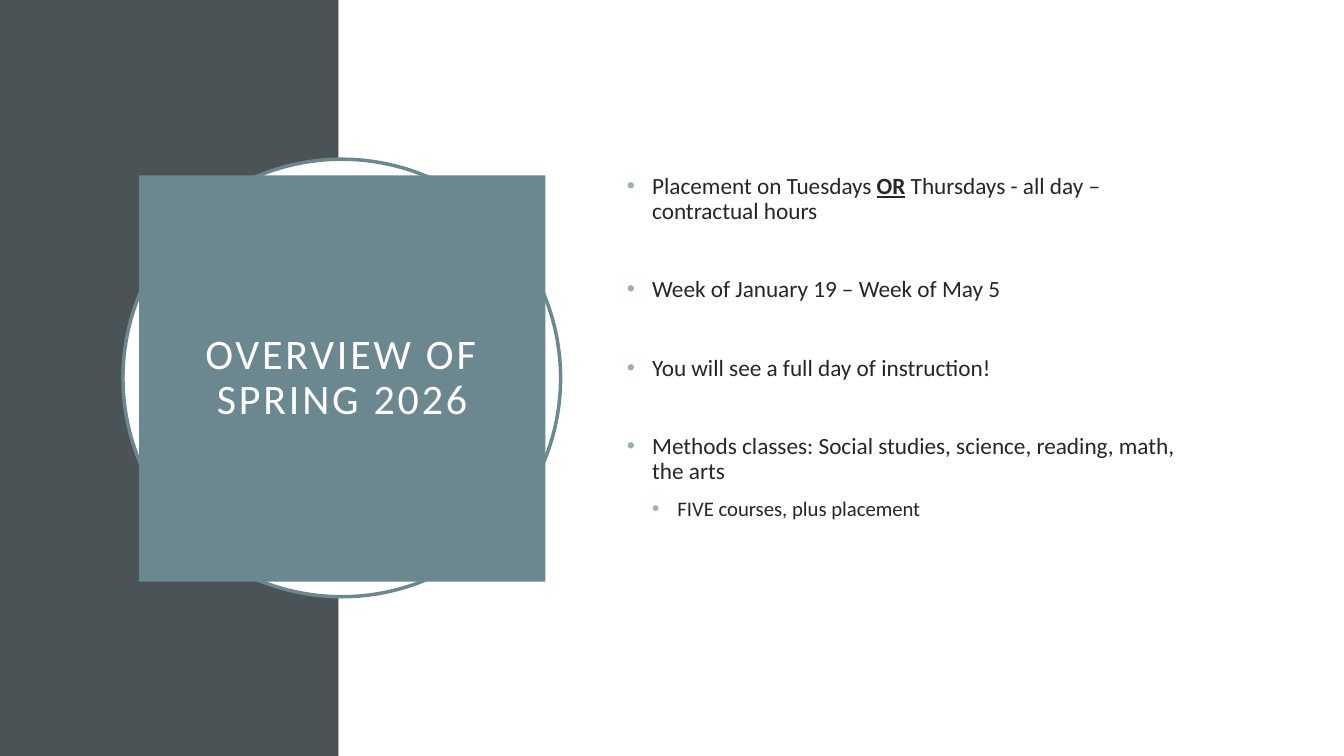
from lxml import etree
from pptx import Presentation
from pptx import util as u
from pptx.dml.color import RGBColor
from pptx.enum import shapes, text
from pptx.oxml.ns import qn

COLOURS = {
    "slate": "4A5356",
    "teal": "6B8891",
    "bullet": "9BAFB5",
    "ink": "262626",
    "white": "FFFFFF",
}
WIDTH, HEIGHT = 13.33, 7.5
BAND_WIDTH = 3.36


class SlideBuilder:
    """Holds the style and the current slide."""

    font_name = "Calibri"
    line_spacing = 0.9
    bullet_indent = 0.25

    def __init__(self, presentation):
        layout = presentation.slide_layouts.get_by_name("Title Only")
        self.slide = presentation.slides.add_slide(layout)

    def colour(self, name):
        return RGBColor.from_string(COLOURS[name])

    def place(self, shape, left, top, width, height):
        shape.left, shape.top = u.Inches(left), u.Inches(top)
        shape.width, shape.height = u.Inches(width), u.Inches(height)

    def style(self, paragraph, size, colour):
        paragraph.line_spacing = self.line_spacing
        paragraph.font.name = self.font_name
        paragraph.font.size = u.Pt(size)
        paragraph.font.color.rgb = self.colour(colour)

    def shape(self, kind, box, fill, line=None):
        shape = self.slide.shapes.add_shape(kind, *map(u.Inches, box))
        shape.shadow.inherit = False
        shape.fill.solid()
        shape.fill.fore_color.rgb = self.colour(fill)
        if line:
            shape.line.color.rgb = self.colour(line)
            shape.line.width = u.Pt(2.5)
        else:
            shape.line.fill.background()

    def title(self, wording, box, fill):
        title = self.slide.shapes.title
        self.place(title, *box)
        title.fill.solid()
        title.fill.fore_color.rgb = self.colour(fill)
        frame = title.text_frame
        frame.text = wording
        frame.word_wrap = True
        frame.auto_size = text.MSO_AUTO_SIZE.NONE
        frame.vertical_anchor = text.MSO_ANCHOR.MIDDLE
        frame.margin_left = frame.margin_right = u.Inches(0.2)
        frame.margin_top = frame.margin_bottom = u.Inches(0.2)
        paragraph = frame.paragraphs[0]
        paragraph.alignment = text.PP_ALIGN.CENTER
        self.style(paragraph, 30, "white")
        paragraph.runs[0].font._element.set("spc", "200")
        # Bring the title in front of the circle
        self.slide.shapes._spTree.append(title._element)

    def bullets(self, items, box):
        frame = self.slide.shapes.add_textbox(*map(u.Inches, box)).text_frame
        frame.word_wrap = True
        frame.margin_top = u.Inches(0.2)
        for index, (level, size, space_before, runs) in enumerate(items):
            paragraph = frame.paragraphs[0] if index == 0 else frame.add_paragraph()
            paragraph.level = level
            paragraph.space_before = u.Pt(space_before)
            self.style(paragraph, size, "ink")
            self.bullet(paragraph, level)
            for wording, emphasised in runs:
                run = paragraph.add_run()
                run.text = wording
                if emphasised:
                    run.font.bold = run.font.underline = True

    def bullet(self, paragraph, level):
        properties = paragraph._p.get_or_add_pPr()
        properties.set("marL", str(u.Inches(self.bullet_indent * (level + 1))))
        properties.set("indent", str(-u.Inches(self.bullet_indent)))
        # Bullet elements come before the default run properties
        default = properties.find(qn("a:defRPr"))
        colour = etree.Element(qn("a:buClr"))
        etree.SubElement(colour, qn("a:srgbClr"), val=COLOURS["bullet"])
        font = etree.Element(qn("a:buFont"), typeface="Arial")
        character = etree.Element(qn("a:buChar"), char="•")
        for element in (colour, font, character):
            default.addprevious(element)


def main():
    presentation = Presentation()
    presentation.slide_width = u.Inches(WIDTH)
    presentation.slide_height = u.Inches(HEIGHT)
    builder = SlideBuilder(presentation)

    # Background panels
    rectangle = shapes.MSO_SHAPE.RECTANGLE
    builder.shape(rectangle, (0, 0, BAND_WIDTH, HEIGHT), "slate")
    builder.shape(rectangle, (BAND_WIDTH, 0, WIDTH - BAND_WIDTH, HEIGHT), "white")

    # Title square over a ringed circle
    builder.shape(shapes.MSO_SHAPE.OVAL, (1.22, 1.58, 4.34, 4.34), "white", "teal")
    builder.title("OVERVIEW OF SPRING 2026", (1.38, 1.74, 4.03, 4.03), "teal")

    # Semester details: level, size, space before, runs
    builder.bullets(
        [
            (0, 16.6, 0, [("Placement on Tuesdays ", False), ("OR", True),
                          (" Thursdays - all day – contractual hours", False)]),
            (0, 16.6, 38, [("Week of January 19 – Week of May 5", False)]),
            (0, 16.6, 38, [("You will see a full day of instruction!", False)]),
            (0, 16.6, 38, [("Methods classes: Social studies, science, reading, "
                            "math, the arts", False)]),
            (1, 14.8, 10, [("FIVE courses, plus placement", False)]),
        ],
        (6.12, 1.53, 5.82, 4.43),
    )

    presentation.save("out.pptx")


if __name__ == "__main__":
    main()
